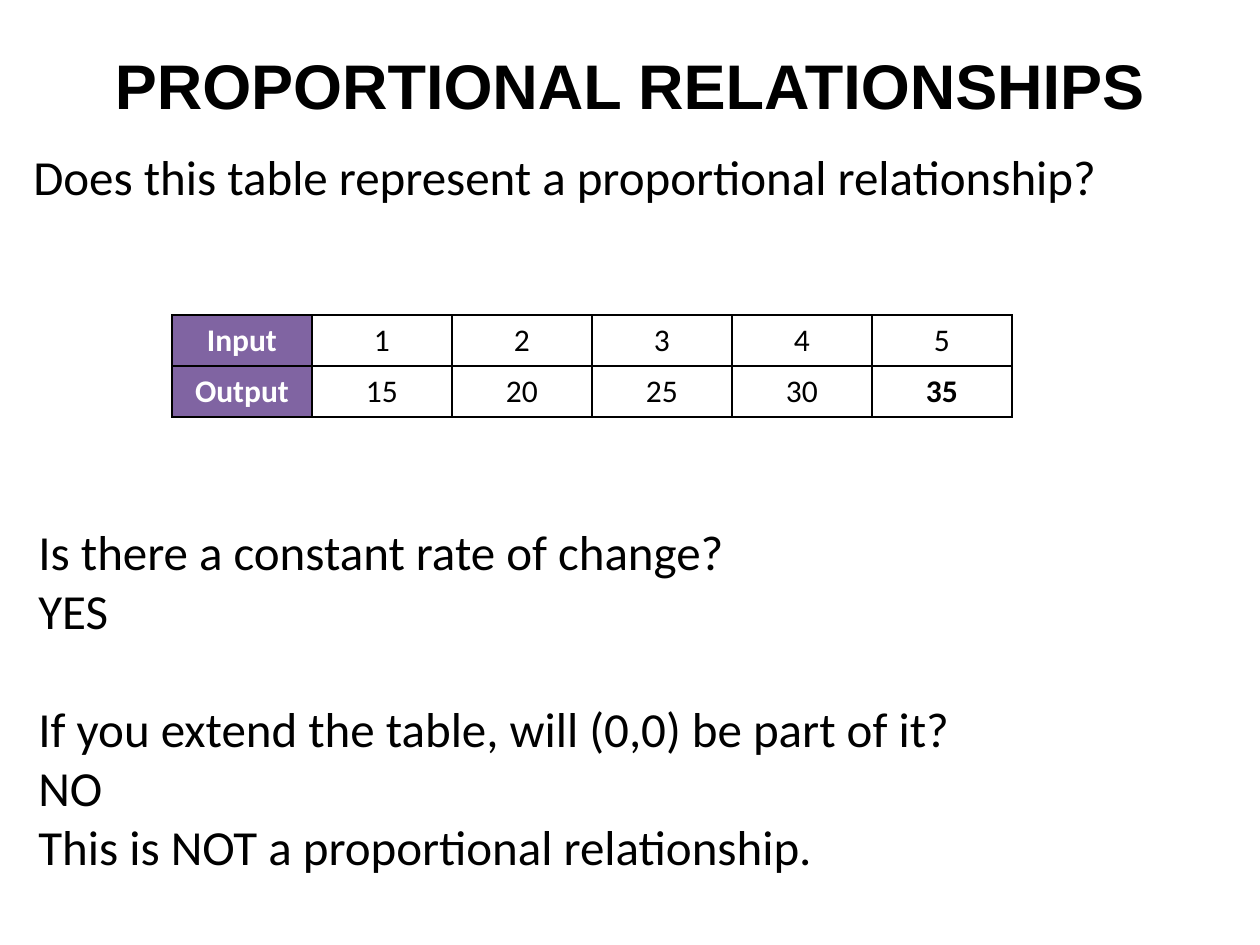
import pptx
import pptx.util
import pptx.dml.color
import pptx.enum.text
import pptx.oxml
import pptx.oxml.ns
from dataclasses import dataclass
from lxml import etree

EMU_PER_PX = 914400 / 126
ALIGN = pptx.enum.text.PP_ALIGN
ANCHOR = pptx.enum.text.MSO_ANCHOR


@dataclass(frozen=True)
class Theme:
    black: str = "000000"
    white: str = "FFFFFF"
    purple: str = "8064A2"
    title_font: str = "Arial"
    body_font: str = "Calibri"
    title_size: int = 36
    body_size: int = 28
    table_size: int = 18
    border_width: int = 1


THEME = Theme()


def px(length):
    return pptx.util.Emu(round(length * EMU_PER_PX))


def rgb(value):
    return pptx.dml.color.RGBColor.from_string(value)


def write_paragraph(paragraph, text, size, alignment, font=THEME.body_font,
                    color=THEME.black, bold=False):
    paragraph.text = text
    paragraph.alignment = alignment
    for run in paragraph.runs:
        run.font.name = font
        run.font.size = pptx.util.Pt(size)
        run.font.bold = bold
        run.font.color.rgb = rgb(color)


def add_text_frame(slide, box, anchor=ANCHOR.TOP):
    text_frame = slide.shapes.add_textbox(*map(px, box)).text_frame
    text_frame.word_wrap = True
    text_frame.vertical_anchor = anchor
    return text_frame


def add_title(slide, text, box):
    text_frame = add_text_frame(slide, box, ANCHOR.MIDDLE)
    write_paragraph(text_frame.paragraphs[0], text, THEME.title_size,
                    ALIGN.CENTER, THEME.title_font, bold=True)


def add_body(slide, groups, box):
    """Write groups of lines, with one line's height between groups."""
    text_frame = add_text_frame(slide, box)
    paragraph = text_frame.paragraphs[0]
    for group_index, lines in enumerate(groups):
        for line_index, line in enumerate(lines):
            if group_index or line_index:
                paragraph = text_frame.add_paragraph()
            write_paragraph(paragraph, line, THEME.body_size, ALIGN.JUSTIFY)
            if group_index and not line_index:
                paragraph.space_before = pptx.util.Pt(34)


def set_borders(cell):
    properties = cell._tc.get_or_add_tcPr()
    for index, side in enumerate(("lnL", "lnR", "lnT", "lnB")):
        line = etree.Element(pptx.oxml.ns.qn(f"a:{side}"),
                             w=str(pptx.util.Pt(THEME.border_width)))
        fill = etree.SubElement(line, pptx.oxml.ns.qn("a:solidFill"))
        etree.SubElement(fill, pptx.oxml.ns.qn("a:srgbClr"), val=THEME.black)
        properties.insert(index, line)


def add_value_table(slide, rows, box, bold_values):
    shape = slide.shapes.add_table(len(rows), len(rows[0]), *map(px, box))
    table = shape.table
    for row_index, row in enumerate(rows):
        for column_index, value in enumerate(row):
            is_label = column_index == 0
            cell = table.cell(row_index, column_index)
            cell.vertical_anchor = ANCHOR.MIDDLE
            cell.fill.solid()
            cell.fill.fore_color.rgb = rgb(THEME.purple if is_label else THEME.white)
            write_paragraph(cell.text_frame.paragraphs[0], value,
                            THEME.table_size, ALIGN.CENTER,
                            color=THEME.white if is_label else THEME.black,
                            bold=is_label or value in bold_values)
            set_borders(cell)


def main():
    presentation = pptx.Presentation()
    presentation.slide_width = px(1260)
    presentation.slide_height = px(945)
    slide = presentation.slides.add_slide(presentation.slide_layouts[6])

    # Title and opening question
    add_title(slide, "PROPORTIONAL RELATIONSHIPS", (0, 32, 1260, 105))
    add_body(slide, [["Does this table represent a proportional relationship?"]],
             (21, 140, 1207, 72))

    # Input and output values
    add_value_table(slide, [("Input", "1", "2", "3", "4", "5"),
                            ("Output", "15", "20", "25", "30", "35")],
                    (172, 315, 840, 102), bold_values={"35"})

    # Reasoning and conclusion
    add_body(slide, [
        ["Is there a constant rate of change?", "YES"],
        ["If you extend the table, will (0,0) be part of it?", "NO",
         "This is NOT a proportional relationship."],
    ], (26, 515, 1207, 369))

    presentation.save("out.pptx")


if __name__ == "__main__":
    main()
